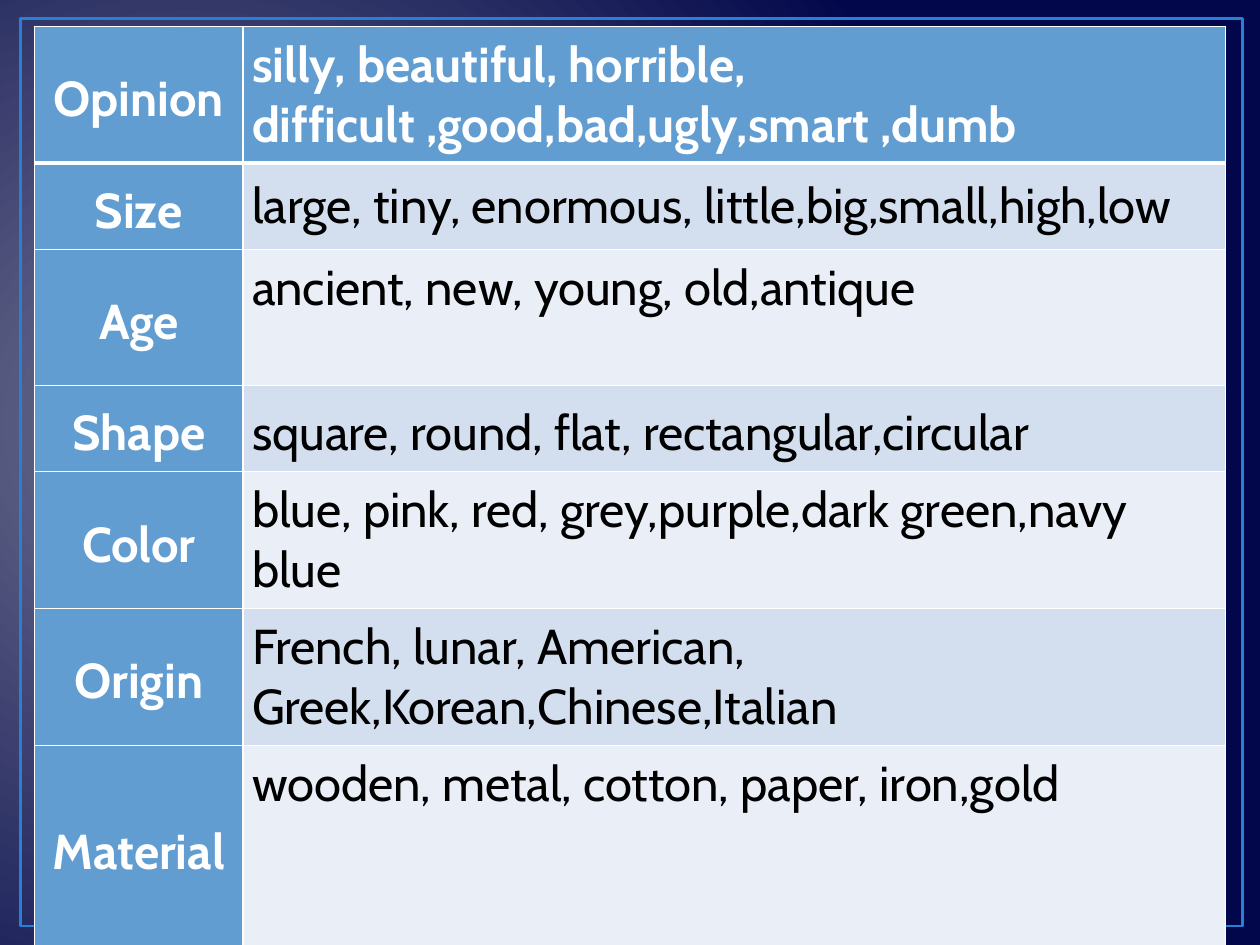
from lxml.etree import SubElement
from pptx import Presentation
from pptx.dml.color import RGBColor
from pptx.enum.shapes import MSO_SHAPE as Preset
from pptx.enum.text import MSO_ANCHOR as Anchor, PP_ALIGN as Align
from pptx.oxml.ns import qn
from pptx.util import Cm, Pt

COLORS = {
    "glow": "6E708E", "night": "01074A", "frame": "297FD5", "label": "629DD1",
    "odd": "D3DFEE", "even": "EAEFF7", "white": "FFFFFF", "black": "000000",
}

# Label, examples, row height in cm, anchor and line spacing of the examples
ADJECTIVES = [
    ("Opinion", "silly, beautiful, horrible, difficult ,good,bad,ugly,smart ,dumb",
     2.74, Anchor.MIDDLE, 1),
    ("Size", "large, tiny, enormous, little,big,small,high,low", 1.71, Anchor.MIDDLE, 1),
    ("Age", "ancient, new, young, old,antique", 2.74, Anchor.TOP, 1),
    ("Shape", "square, round, flat, rectangular,circular", 1.71, Anchor.MIDDLE, 1.15),
    ("Color", "blue, pink, red, grey,purple,dark green,navy blue", 2.74, Anchor.MIDDLE, 1),
    ("Origin", "French, lunar, American, Greek,Korean,Chinese,Italian", 2.74, Anchor.MIDDLE, 1),
    ("Material", "wooden, metal, cotton, paper, iron,gold", 4.11, Anchor.TOP, 1),
]


def rgb(name):
    return RGBColor.from_string(COLORS[name])


class SlideBuilder:
    font = "Cabin"
    size = Pt(28)

    def __init__(self, slide):
        self.slide = slide

    def background(self):
        """Radial gradient with its centre towards the left edge."""
        fill = self.slide.background.fill
        fill.gradient()
        for stop, name in zip(fill.gradient_stops, ("glow", "night")):
            stop.color.rgb = rgb(name)
        gradient = self.slide.background._cSld.find(".//" + qn("a:gradFill"))
        gradient.remove(gradient.find(qn("a:lin")))
        circle = SubElement(gradient, qn("a:path"), path="circle")
        SubElement(circle, qn("a:fillToRect"), l="15000", t="50000", r="85000", b="60000")

    def frame(self, left, top, width, height):
        frame = self.slide.shapes.add_shape(
            Preset.RECTANGLE, Cm(left), Cm(top), Cm(width), Cm(height))
        frame.shadow.inherit = False
        frame.fill.background()
        frame.line.color.rgb = rgb("frame")
        frame.line.width = Pt(1.5)

    def borders(self, cell, top, bottom):
        properties = cell._tc.get_or_add_tcPr()
        for side, points in (("L", 1), ("R", 1), ("T", top), ("B", bottom)):
            line = SubElement(properties, qn("a:ln" + side), w=str(Pt(points)))
            solid = SubElement(line, qn("a:solidFill"))
            SubElement(solid, qn("a:srgbClr"), val=COLORS["white"])

    def cell(self, cell, text, fill, color, bold, side, anchor, align, spacing):
        cell.fill.solid()
        cell.fill.fore_color.rgb = rgb(fill)
        cell.margin_left = cell.margin_right = Cm(side)
        cell.margin_top = cell.margin_bottom = Cm(0.18)
        cell.vertical_anchor = anchor
        paragraph = cell.text_frame.paragraphs[0]
        paragraph.alignment = align
        paragraph.line_spacing = spacing
        run = paragraph.add_run()
        run.text = text
        run.font.name, run.font.size, run.font.bold = self.font, self.size, bold
        run.font.color.rgb = rgb(color)

    def table(self, left, top, widths, rows):
        heights = [row[2] for row in rows]
        table = self.slide.shapes.add_table(
            len(rows), len(widths), Cm(left), Cm(top), Cm(sum(widths)), Cm(sum(heights))).table
        for column, width in zip(table.columns, widths):
            column.width = Cm(width)
        for index, (label, examples, height, anchor, spacing) in enumerate(rows):
            table.rows[index].height = Cm(height)
            label_cell, examples_cell = table.rows[index].cells
            header = index == 0
            for cell in (label_cell, examples_cell):
                self.borders(cell, 3 if index == 1 else 1, 3 if header else 1)
            self.cell(label_cell, label, "label", "white", True, 0.25,
                      Anchor.MIDDLE, Align.CENTER, 1.15)
            band = "label" if header else ("even", "odd")[index % 2]
            self.cell(examples_cell, examples, band, "white" if header else "black", header,
                      0.18, anchor, Align.LEFT, spacing)


def main():
    deck = Presentation()
    deck.slide_width, deck.slide_height = Cm(25.4), Cm(19.05)
    builder = SlideBuilder(deck.slides.add_slide(deck.slide_layouts[6]))
    builder.background()
    builder.frame(0.41, 0.38, 24.64, 18.29)
    builder.table(0.7, 0.53, (4.2, 19.8), ADJECTIVES)
    deck.save("out.pptx")


if __name__ == "__main__":
    main()
